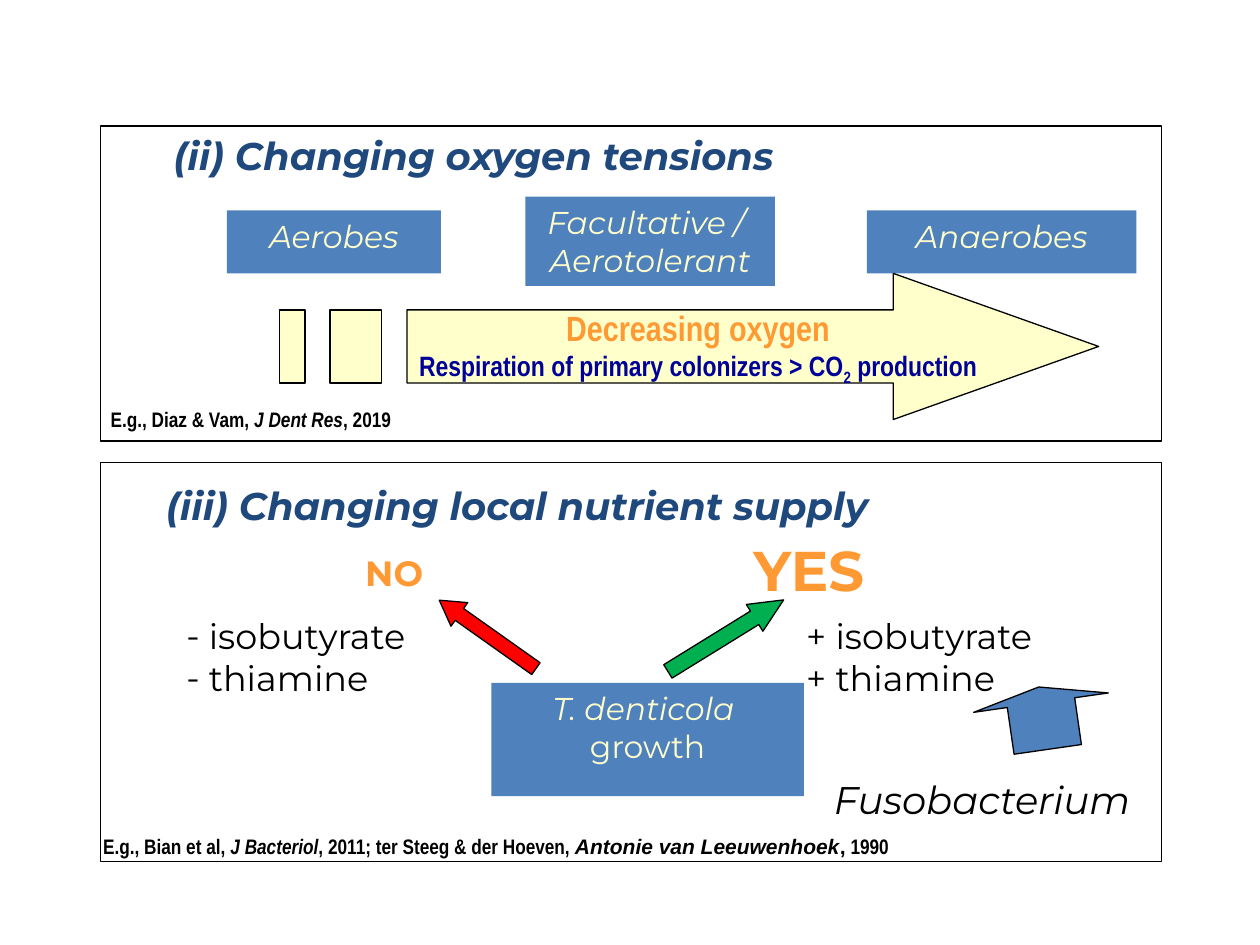
"""Build a slide on oxygen tension and nutrient supply as drivers of microbial change."""
from dataclasses import dataclass
from typing import NamedTuple, Optional

from lxml.etree import SubElement
from pptx import Presentation
from pptx.dml.color import RGBColor
from pptx.enum.shapes import MSO_SHAPE
from pptx.enum.text import MSO_AUTO_SIZE, PP_ALIGN
from pptx.oxml.ns import qn
from pptx.util import Inches, Pt

COLORS = {
    "black": "000000", "blue": "4F81BD", "cream": "FFFFCC", "orange": "FF9933",
    "navy": "1F497D", "indigo": "000099", "green": "00B050", "red": "FF0000",
}


class Area(NamedTuple):
    left: float
    top: float
    width: float
    height: float


class Style(NamedTuple):
    size: int
    color: str
    font: str = "Montserrat"
    bold: bool = False
    italic: bool = False


class Span(NamedTuple):
    text: str
    style: Style
    subscript: bool = False


@dataclass
class Label:
    area: Area
    lines: list[list[Span]]
    centered: bool = False
    wrap: bool = False
    fill: Optional[str] = None
    bullet: Optional[str] = None


@dataclass
class Arrow:
    area: Area
    rotation: float
    head: float
    fill: str


HEADING = Style(22, "navy", bold=True, italic=True)
GROUP = Style(18, "cream", italic=True)
NUTRIENT = Style(20, "black")
ANSWER = Style(20, "orange", bold=True)
OXYGEN = Style(20, "orange", "Arial Narrow", bold=True)
RESPIRATION = OXYGEN._replace(size=16, color="indigo")
SOURCE = Style(12, "black", "Arial Narrow", bold=True)
JOURNAL = SOURCE._replace(italic=True)

PANELS = [Area(0.8, 1, 8.42, 2.5), Area(0.8, 3.67, 8.42, 3.17)]


def plain(style: Style, *texts: str) -> list[list[Span]]:
    """Return one single-span line per text."""
    return [[Span(text, style)] for text in texts]


NUTRIENT_LABELS = [
    Label(Area(3.9, 5.42, 2.48, 0.9),
          [[Span("T. denticola ", GROUP)], [Span("growth", GROUP._replace(italic=False))]],
          centered=True, fill="blue"),
    Label(Area(1.38, 4.83, 2.21, 0.77), plain(NUTRIENT, " isobutyrate", " thiamine"), bullet="-"),
    Label(Area(6.3, 4.83, 2.32, 0.77), plain(NUTRIENT, "+ isobutyrate", "+ thiamine"), wrap=True),
    Label(Area(2.8, 4.33, 1.08, 0.43), plain(ANSWER, "NO"), wrap=True),
    Label(Area(5.88, 4.2, 1.19, 0.63), plain(ANSWER._replace(size=32), "YES")),
    Label(Area(6.07, 6.11, 3.45, 0.47), plain(Style(22, "black", italic=True), "Fusobacterium"),
          centered=True, wrap=True),
    Label(Area(1.22, 3.78, 5.94, 0.47), plain(HEADING, "(iii) Changing local nutrient supply")),
    Label(Area(0.72, 6.57, 7.08, 0.3),
          [[Span("E.g., Bian et al, ", SOURCE), Span("J Bacteriol", JOURNAL),
            Span(", 2011; ter Steeg & der Hoeven, ", SOURCE),
            Span("Antonie van Leeuwenhoek", JOURNAL._replace(font="Arial")),
            Span(",", SOURCE._replace(font="Arial")), Span(" 1990", SOURCE)]], wrap=True),
]
OXYGEN_GROUPS = [
    Label(Area(1.8, 1.67, 1.7, 0.5), plain(GROUP, "Aerobes"), centered=True, fill="blue"),
    Label(Area(6.88, 1.67, 2.14, 0.5), plain(GROUP, "Anaerobes"), centered=True, fill="blue"),
    Label(Area(4.17, 1.56, 1.98, 0.71), plain(GROUP, "Facultative / ", "Aerotolerant"),
          centered=True, fill="blue"),
]
OXYGEN_LABELS = [
    Label(Area(3.22, 2.38, 4.64, 0.7),
          [[Span("Decreasing oxygen", OXYGEN)],
           [Span("Respiration of primary colonizers > CO", RESPIRATION),
            Span("2", RESPIRATION, subscript=True), Span(" production", RESPIRATION)]],
          centered=True),
    Label(Area(1.28, 1, 5.14, 0.47), plain(HEADING, "(ii) Changing oxygen tensions")),
    Label(Area(0.78, 3.18, 3.63, 0.3),
          [[Span("E.g., Diaz & Vam, ", SOURCE), Span("J Dent Res", JOURNAL),
            Span(", 2019", SOURCE)]], wrap=True),
]
ARROWS = [
    Arrow(Area(5.22, 4.92, 1.08, 0.25), 328.3, 1.083, "green"),
    Arrow(Area(8.03, 5.16, 0.5, 1.08), 261.8, 0.25, "blue"),
    Arrow(Area(3.4, 4.92, 0.94, 0.23), 215.3, 0.85, "red"),
]
OXYGEN_ARROW = [
    [(7.09, 2.17), (7.09, 2.46), (3.23, 2.46), (3.23, 3.04), (7.09, 3.04), (7.09, 3.33), (8.72, 2.75)],
    [(2.62, 2.46), (2.62, 3.04), (3.03, 3.04), (3.03, 2.46)],
    [(2.22, 2.46), (2.22, 3.04), (2.42, 3.04), (2.42, 2.46)],
]


def color(name: str) -> RGBColor:
    """Look up a named colour."""
    return RGBColor.from_string(COLORS[name])


def paint(shape, fill: Optional[str]) -> None:
    """Set fill and outline and remove the shadow."""
    shape.shadow.inherit = False
    if fill:
        shape.fill.solid()
        shape.fill.fore_color.rgb = color(fill)
    else:
        shape.fill.background()
    shape.line.color.rgb = color("black")
    shape.line.width = Pt(0.75)


def add_preset(page, kind: MSO_SHAPE, area: Area):
    """Add a preset shape over an area."""
    return page.shapes.add_shape(kind, *map(Inches, area))


def add_span(para, span: Span) -> None:
    """Append a formatted run to a paragraph."""
    run = para.add_run()
    run.text = span.text
    font = run.font
    font.size, font.name = Pt(span.style.size), span.style.font
    font.bold, font.italic = span.style.bold, span.style.italic
    font.color.rgb = color(span.style.color)
    if span.subscript:
        run._r.get_or_add_rPr().set("baseline", "-25000")


def add_bullet(para, mark: str, font: str) -> None:
    """Give a paragraph a bullet character."""
    properties = para._p.get_or_add_pPr()
    SubElement(properties, qn("a:buFont")).set("typeface", font)
    SubElement(properties, qn("a:buChar")).set("char", mark)


def add_label(page, label: Label) -> None:
    """Add a text box with an optional fill."""
    box = page.shapes.add_textbox(*map(Inches, label.area))
    if label.fill:
        box.fill.solid()
        box.fill.fore_color.rgb = color(label.fill)
    frame = box.text_frame
    frame.word_wrap = label.wrap
    frame.auto_size = MSO_AUTO_SIZE.SHAPE_TO_FIT_TEXT
    for index, line in enumerate(label.lines):
        para = frame.add_paragraph() if index else frame.paragraphs[0]
        para.alignment = PP_ALIGN.CENTER if label.centered else PP_ALIGN.LEFT
        if label.bullet:
            add_bullet(para, label.bullet, line[0].style.font)
        for span in line:
            add_span(para, span)


def add_arrow(page, arrow: Arrow) -> None:
    """Add a rotated block arrow."""
    shape = add_preset(page, MSO_SHAPE.RIGHT_ARROW, arrow.area)
    shape.rotation = arrow.rotation
    shape.adjustments[0], shape.adjustments[1] = 0.5, arrow.head
    paint(shape, arrow.fill)


def add_outline(page, contours: list[list[tuple[float, float]]], fill: str) -> None:
    """Add one freeform made of closed contours."""
    first, *others = [[(Inches(x), Inches(y)) for x, y in contour] for contour in contours]
    builder = page.shapes.build_freeform(*first[0])
    builder.add_line_segments(first[1:], close=True)
    for contour in others:
        builder.move_to(*contour[0])
        builder.add_line_segments(contour[1:], close=True)
    paint(builder.convert_to_shape(), fill)


def main() -> None:
    """Assemble and save the deck."""
    deck = Presentation()
    deck.slide_width, deck.slide_height = Inches(10), Inches(7.5)
    page = deck.slides.add_slide(deck.slide_layouts[6])
    for area in PANELS:
        paint(add_preset(page, MSO_SHAPE.RECTANGLE, area), None)
    for label in NUTRIENT_LABELS + OXYGEN_GROUPS:
        add_label(page, label)
    for arrow in ARROWS:
        add_arrow(page, arrow)
    add_outline(page, OXYGEN_ARROW, "cream")
    for label in OXYGEN_LABELS:
        add_label(page, label)
    deck.save("out.pptx")


if __name__ == "__main__":
    main()
